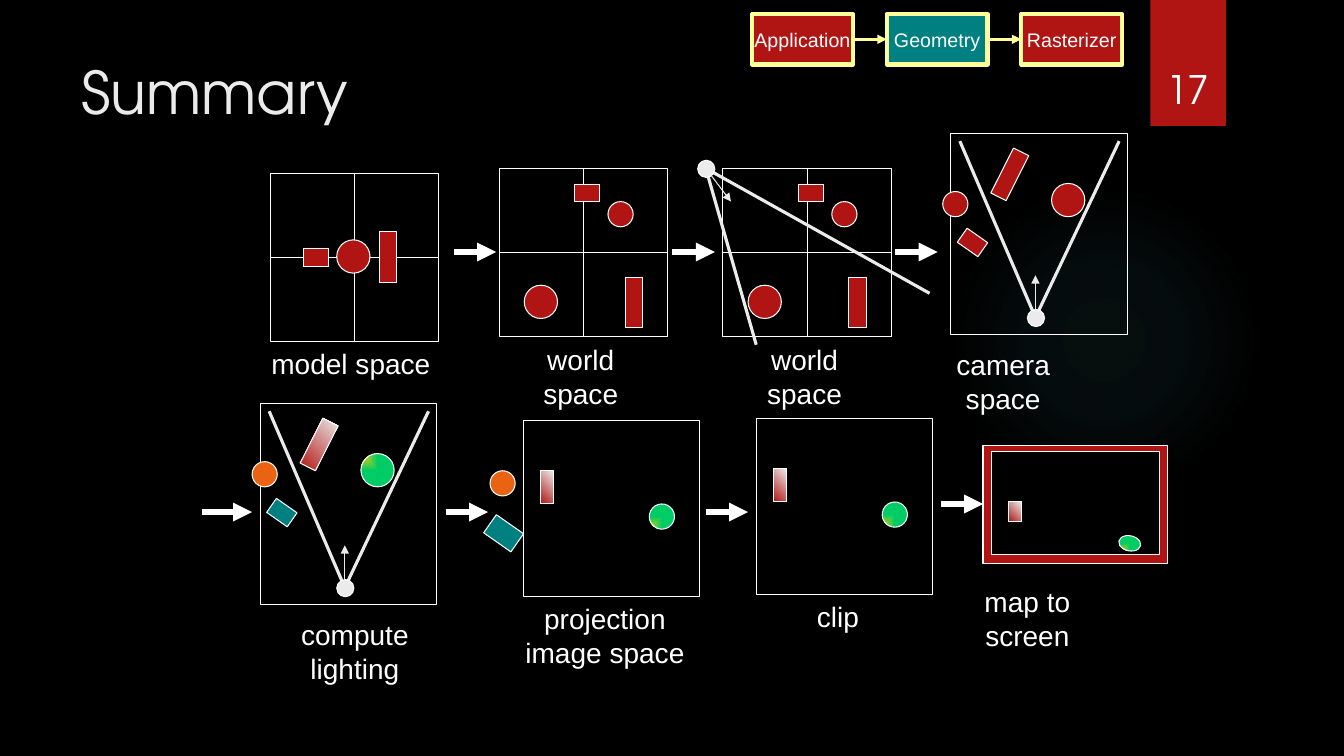
from lxml import etree
from pptx import Presentation
from pptx import util as u
from pptx.dml.color import RGBColor
from pptx.enum import shapes, text
from pptx.oxml import parse_xml
from pptx.oxml.ns import nsdecls, qn

BLACK = RGBColor(0x00, 0x00, 0x00)
WHITE = RGBColor(0xFF, 0xFF, 0xFF)
PALE = RGBColor(0xEB, 0xEB, 0xEB)
RED = RGBColor(0xB0, 0x15, 0x13)
TEAL = RGBColor(0x00, 0x80, 0x80)
ORANGE = RGBColor(0xEA, 0x63, 0x12)
YELLOW = RGBColor(0xFF, 0xFF, 0x99)
GOLD = RGBColor(0xFF, 0xCC, 0x00)
GREEN = RGBColor(0x00, 0xCC, 0x66)
GLOW = RGBColor(0x50, 0xB9, 0xC1)

BODY_FONT = "Arial"
TITLE_FONT = "TeX Gyre Adventor"
RECT = shapes.MSO_SHAPE.RECTANGLE
OVAL = shapes.MSO_SHAPE.OVAL
CENTER = text.PP_ALIGN.CENTER


def gradient(stops, direction):
    """Gradient fill from (position %, colour, alpha %) stops and a direction element."""
    marks = "".join(
        f'<a:gs pos="{position * 1000}"><a:srgbClr val="{color}">'
        f'<a:alpha val="{alpha * 1000}"/></a:srgbClr></a:gs>'
        for position, color, alpha in stops)
    return (f'<a:gradFill {nsdecls("a")} rotWithShape="0">'
            f'<a:gsLst>{marks}</a:gsLst>{direction}</a:gradFill>')


def focus(kind, left, top, right, bottom):
    return (f'<a:path path="{kind}"><a:fillToRect l="{left}000" t="{top}000" '
            f'r="{right}000" b="{bottom}000"/></a:path>')


BALL_STOPS = [(0, GOLD, 100), (100, GREEN, 100)]
LIT_BALL = gradient(BALL_STOPS, focus("rect", 0, 0, 100, 100))
PROJECTED_BALL = gradient(BALL_STOPS, focus("rect", 0, 100, 100, 0))
LIT_BAR = gradient([(0, RED, 100), (100, PALE, 100)],
                   '<a:lin ang="18900000" scaled="1"/>')
BACK_GLOW = gradient([(0, GLOW, 7), (36, GLOW, 6), (69, GLOW, 0)],
                     focus("circle", 50, 50, 50, 50))


def add_shape(slide, kind, left, top, width, height, fill=None,
              line=WHITE, weight=0.75, rotation=0):
    shape = slide.shapes.add_shape(kind, *map(u.Inches, (left, top, width, height)))
    shape.shadow.inherit = False
    shape.rotation = rotation
    if isinstance(fill, RGBColor):
        shape.fill.solid()
        shape.fill.fore_color.rgb = fill
    else:
        shape.fill.background()
        if fill:
            properties = shape._element.spPr
            properties.replace(properties.find(qn("a:noFill")), parse_xml(fill))
    if line is None:
        shape.line.fill.background()
    else:
        shape.line.color.rgb = line
        shape.line.width = u.Pt(weight)
    return shape


def add_line(slide, start, end, color=WHITE, weight=0.75, arrow=False):
    connector = slide.shapes.add_connector(
        shapes.MSO_CONNECTOR.STRAIGHT, *map(u.Inches, (*start, *end)))
    connector.line.color.rgb = color
    connector.line.width = u.Pt(weight)
    if arrow:
        etree.SubElement(connector.line._get_or_add_ln(), qn("a:tailEnd"), type="triangle")
    etree.SubElement(connector._element.spPr, qn("a:effectLst"))


def set_text(shape, content, size=20, font=BODY_FONT, color=WHITE, align=CENTER,
             anchor=text.MSO_ANCHOR.TOP, wrap=False):
    frame = shape.text_frame
    frame.word_wrap = wrap
    frame.vertical_anchor = anchor
    frame.text = content
    for paragraph in frame.paragraphs:
        paragraph.alignment = align
        paragraph.font.size = u.Pt(size)
        paragraph.font.name = font
        paragraph.font.color.rgb = color


def add_label(slide, content, left, top, width, height=0.43, free_right=None, **style):
    """Text box; free_right keeps that much of its right side empty and wraps the text."""
    box = slide.shapes.add_textbox(*map(u.Inches, (left, top, width, height)))
    if free_right is not None:
        box.text_frame.margin_left = 0
        box.text_frame.margin_right = u.Inches(free_right)
        style["wrap"] = True
    set_text(box, content, **style)


def add_step_arrow(slide, left, y, length=0.42):
    add_line(slide, (left, y), (left + length, y), weight=4.5, arrow=True)


def add_axes(slide, left, top, size=1.67):
    middle = size / 2
    add_shape(slide, RECT, left, top, size, size)
    add_line(slide, (left, top + middle), (left + size, top + middle))
    add_line(slide, (left + middle, top + size), (left + middle, top))


def add_model_space(slide, left, top):
    add_axes(slide, left, top)
    add_shape(slide, OVAL, left + 0.66, top + 0.66, 0.33, 0.33, RED)
    add_shape(slide, RECT, left + 0.33, top + 0.75, 0.25, 0.17, RED)
    add_shape(slide, RECT, left + 1.08, top + 0.58, 0.17, 0.5, RED)
    add_label(slide, "model space", left - 0.09, top + 1.67, 1.78)


def add_world_space(slide, left, top):
    add_axes(slide, left, top)
    add_shape(slide, OVAL, left + 0.25, top + 1.16, 0.33, 0.33, RED)
    add_shape(slide, RECT, left + 0.75, top + 0.16, 0.25, 0.17, RED)
    add_shape(slide, RECT, left + 1.25, top + 1.08, 0.17, 0.5, RED)
    add_shape(slide, OVAL, left + 1.08, top + 0.33, 0.25, 0.25, RED)
    add_label(slide, "world space", left - 0.03, top + 1.68, 1.68)


def add_camera(slide, x, y, view_tip, edges):
    """Camera dot with its view direction and the edges of its field of view."""
    for edge in edges:
        add_line(slide, (x, y), edge, PALE, 2.25)
    add_shape(slide, OVAL, x - 0.08, y - 0.08, 0.17, 0.17, PALE)
    add_line(slide, (x, y), view_tip, PALE, arrow=True)


def add_camera_space(slide, left, top, ball, bar, small_ball, block):
    x, y = left + 0.84, top + 1.83
    add_camera(slide, x, y, (x, y - 0.42), [(x - 0.75, y - 1.75), (x + 0.83, y - 1.75)])
    add_shape(slide, OVAL, left + 1, top + 0.5, 0.33, 0.33, ball)
    add_shape(slide, RECT, left + 0.5, top + 0.16, 0.17, 0.5, bar, rotation=26.8)
    add_shape(slide, RECT, left, top, 1.75, 2)
    add_shape(slide, OVAL, left - 0.08, top + 0.58, 0.25, 0.25, small_ball)
    add_shape(slide, RECT, left + 0.09, top + 1, 0.25, 0.17, block, rotation=215)


def add_projected_scene(slide, left, top):
    add_shape(slide, RECT, left, top, 1.75, 1.75)
    add_shape(slide, OVAL, left + 1.25, top + 0.83, 0.25, 0.25, PROJECTED_BALL, rotation=281.8)
    add_shape(slide, RECT, left + 0.17, top + 0.5, 0.13, 0.33, LIT_BAR)


def add_screen(slide):
    add_shape(slide, RECT, 9.75, 4.42, 1.83, 1.17, RED)
    add_shape(slide, RECT, 9.83, 4.48, 1.67, 1.02, BLACK)
    add_shape(slide, OVAL, 11.13, 5.28, 0.15, 0.22, PROJECTED_BALL, rotation=281.8)
    add_shape(slide, RECT, 10, 4.98, 0.13, 0.19, LIT_BAR)
    add_label(slide, "map to screen", 9.67, 5.75, 1.96, free_right=0.92)


def add_pipeline(slide):
    left, top, step = 7.46, 0.14, 1.335
    stages = [("Application", RED), ("Geometry", TEAL), ("Rasterizer", RED)]
    for index, (name, fill) in enumerate(stages):
        x = left + index * step
        stage = add_shape(slide, RECT, x, top, 1, 0.5, fill, YELLOW, 3)
        set_text(stage, name, size=14, anchor=text.MSO_ANCHOR.MIDDLE)
        if index:
            add_line(slide, (x - step + 1, top + 0.25), (x, top + 0.25), YELLOW, 2.25, True)


def main():
    presentation = Presentation()
    presentation.slide_width = u.Inches(13.33)
    presentation.slide_height = u.Inches(7.5)
    slide = presentation.slides.add_slide(presentation.slide_layouts[6])
    slide.background.fill.solid()
    slide.background.fill.fore_color.rgb = BLACK

    # Backdrop, title and page number
    add_shape(slide, OVAL, 9.41, 1.83, 3.08, 3.08, BACK_GLOW, line=None)
    add_shape(slide, RECT, 11.41, 0, 0.75, 1.25, RED, line=None)
    add_label(slide, "Summary", 0.71, 0.5, 10.29, 1.53, size=42, font=TITLE_FONT,
              color=PALE, align=text.PP_ALIGN.LEFT, wrap=True)
    add_label(slide, "17", 11.32, 0.32, 0.92, 0.84, size=28, font=TITLE_FONT,
              anchor=text.MSO_ANCHOR.BOTTOM, wrap=True)
    add_pipeline(slide)

    # Upper row: from model space to camera space
    add_model_space(slide, 2.68, 1.72)
    add_world_space(slide, 4.95, 1.67)
    add_world_space(slide, 7.17, 1.67)
    add_camera(slide, 7, 1.67, (7.25, 2), [(7.5, 3.42), (9.22, 2.91)])
    add_camera_space(slide, 9.43, 1.32, RED, RED, RED, RED)
    add_label(slide, "camera space", 9.39, 3.4, 1.94, free_right=0.82)
    for left in (4.5, 6.67, 8.88):
        add_step_arrow(slide, left, 2.5)

    # Lower row: from lighting to the screen
    add_camera_space(slide, 2.58, 4, LIT_BALL, LIT_BAR, ORANGE, TEAL)
    add_label(slide, "compute lighting", 2.41, 6.08, 2.22)
    add_projected_scene(slide, 5.19, 4.17)
    add_shape(slide, OVAL, 4.86, 4.67, 0.25, 0.25, ORANGE)
    add_shape(slide, RECT, 4.83, 5.18, 0.33, 0.22, TEAL, rotation=215)
    add_label(slide, "projection\nimage space", 5.11, 5.92, 1.78, 0.77)
    add_projected_scene(slide, 7.5, 4.15)
    add_label(slide, "clip", 8, 5.9, 0.62)
    add_screen(slide)
    add_step_arrow(slide, 2, 5.08, 0.5)
    for left, y in ((4.42, 5.08), (7, 5.08), (9.33, 5)):
        add_step_arrow(slide, left, y)

    presentation.save("out.pptx")


if __name__ == "__main__":
    main()
